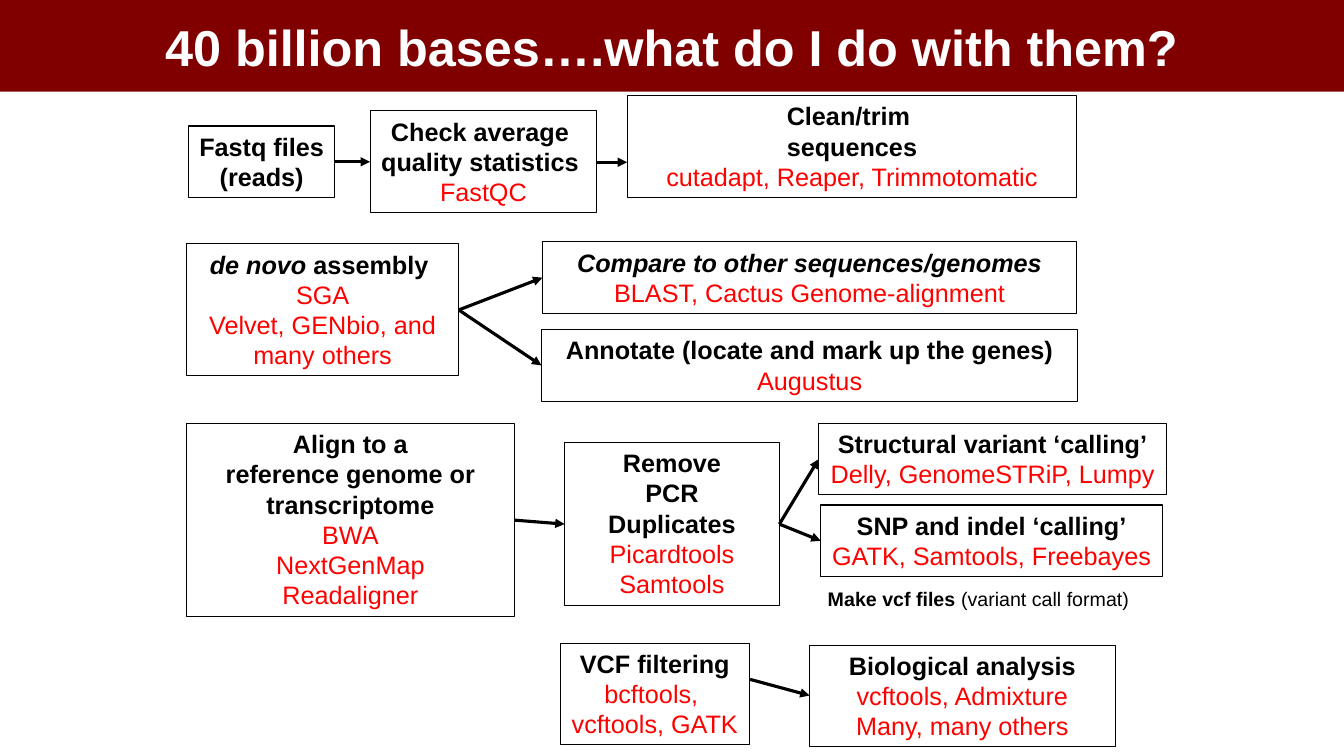
import pptx
import pptx.util
import pptx.dml.color
import pptx.enum.shapes
import pptx.enum.text
import pptx.oxml.ns
import lxml.etree

Inches = pptx.util.Inches
Pt = pptx.util.Pt
RGBColor = pptx.dml.color.RGBColor
MAROON = RGBColor(0x80, 0x00, 0x00)
WHITE = RGBColor(0xFF, 0xFF, 0xFF)
BLACK = RGBColor(0x00, 0x00, 0x00)
RED = RGBColor(0xFF, 0x00, 0x00)
LEFT, RIGHT = 1, 3


def style(font, size, color, bold):
    font.name = "Arial"
    font.size = Pt(size)
    font.color.rgb = color
    font.bold = bold


def add_rect(slide, left, top, width, height):
    rect = slide.shapes.add_shape(
        pptx.enum.shapes.MSO_SHAPE.RECTANGLE,
        Inches(left), Inches(top), Inches(width), Inches(height))
    rect.shadow.inherit = False
    return rect


def add_title(slide, text):
    bar = add_rect(slide, 0, 0, 13.33, 0.91)
    bar.fill.solid()
    bar.fill.fore_color.rgb = MAROON
    bar.line.fill.background()
    para = bar.text_frame.paragraphs[0]
    para.text = text
    para.alignment = pptx.enum.text.PP_ALIGN.CENTER
    style(para.font, 36, WHITE, True)


def add_step(slide, place, heads, tools=(), wrap=True):
    """Draw a box with bold black heads above red tool names.

    A head is a text, or a pair of an italic and an upright part.
    """
    step = add_rect(slide, *place)
    step.fill.background()
    step.line.color.rgb = BLACK
    step.line.width = Pt(0.75)
    frame = step.text_frame
    frame.word_wrap = wrap
    frame.auto_size = pptx.enum.text.MSO_AUTO_SIZE.SHAPE_TO_FIT_TEXT
    frame.vertical_anchor = pptx.enum.text.MSO_ANCHOR.TOP
    rows = [(head, BLACK, True) for head in heads]
    rows += [(tool, RED, False) for tool in tools]
    for index, (text, color, bold) in enumerate(rows):
        para = frame.add_paragraph() if index else frame.paragraphs[0]
        para.alignment = pptx.enum.text.PP_ALIGN.CENTER
        style(para.font, 18, color, bold)
        slanted, upright = ("", text) if isinstance(text, str) else text
        if slanted:
            run = para.add_run()
            run.text = slanted
            run.font.italic = True
        if upright:
            para.add_run().text = upright
    return step


def add_arrow(slide, left, top, right, bottom):
    arrow = slide.shapes.add_connector(
        pptx.enum.shapes.MSO_CONNECTOR.STRAIGHT,
        Inches(left), Inches(top), Inches(right), Inches(bottom))
    arrow.line.color.rgb = BLACK
    arrow.line.width = Pt(2.25)
    qn = pptx.oxml.ns.qn
    lxml.etree.SubElement(arrow.line._get_or_add_ln(), qn("a:tailEnd"), type="triangle")
    lxml.etree.SubElement(arrow._element.spPr, qn("a:effectLst"))
    return arrow


def link(slide, start, *ends):
    """Join the right side of one step to the left side of others."""
    for end in ends:
        arrow = add_arrow(slide, 0, 0, 1, 1)
        arrow.begin_connect(start, RIGHT)
        arrow.end_connect(end, LEFT)


def add_note(slide, place, strong, plain):
    note = slide.shapes.add_textbox(*map(Inches, place))
    note.text_frame.word_wrap = True
    para = note.text_frame.paragraphs[0]
    para.alignment = pptx.enum.text.PP_ALIGN.CENTER
    for text, bold in ((strong, True), (plain, False)):
        run = para.add_run()
        run.text = text
        style(run.font, 14, BLACK, bold)


def add_reads(slide):
    reads = add_step(slide, (1.87, 1.25, 1.45, 0.71),
                     ["Fastq files", "(reads)"], wrap=False)
    check = add_step(slide, (3.67, 1.1, 2.25, 1.01),
                     ["Check average ", "quality statistics "], ["FastQC"], wrap=False)
    add_step(slide, (6.22, 0.95, 4.46, 1.01), ["Clean/trim ", "sequences"],
             ["cutadapt, Reaper, Trimmotomatic"])
    link(slide, reads, check)
    add_arrow(slide, 5.92, 1.61, 6.22, 1.61)


def add_novo(slide):
    novo = add_step(slide, (1.85, 2.42, 2.7, 1.31), [("de novo ", "assembly ")],
                    ["SGA", "Velvet, GENbio, and many others"])
    compare = add_step(slide, (5.38, 2.4, 5.3, 0.71),
                       [("Compare to other sequences/genomes", "")],
                       ["BLAST, Cactus Genome-alignment"])
    genes = add_step(slide, (5.37, 3.27, 5.32, 0.71),
                     ["Annotate (locate and mark up the genes)"], ["Augustus"])
    link(slide, novo, compare, genes)


def add_calling(slide):
    align = add_step(slide, (1.85, 4.2, 3.25, 1.92),
                     ["Align to a", "reference genome or", "transcriptome"],
                     ["BWA", "NextGenMap", "Readaligner"])
    remove = add_step(slide, (5.6, 4.39, 2.13, 1.62),
                      ["Remove", "PCR", "Duplicates"], ["Picardtools", "Samtools"])
    struct = add_step(slide, (8.12, 4.2, 3.45, 0.71), ["Structural variant ‘calling’"],
                      ["Delly, GenomeSTRiP, Lumpy"], wrap=False)
    indel = add_step(slide, (8.14, 5.01, 3.39, 0.71), ["SNP and indel ‘calling’"],
                     ["GATK, Samtools, Freebayes"], wrap=False)
    add_note(slide, (8.03, 5.77, 3.35, 0.34), "Make vcf files", " (variant call format)")
    link(slide, align, remove)
    link(slide, remove, struct, indel)


def add_filter(slide):
    add_step(slide, (5.56, 6.38, 1.87, 1.01), ["VCF filtering"],
             ["bcftools, ", "vcftools, GATK"], wrap=False)
    add_step(slide, (8.03, 6.4, 3.03, 1.01), ["Biological analysis"],
             ["vcftools, Admixture", "Many, many others"])
    add_arrow(slide, 7.44, 6.74, 8.03, 6.9)


def main():
    deck = pptx.Presentation()
    deck.slide_width = Inches(13.33)
    deck.slide_height = Inches(7.5)
    slide = deck.slides.add_slide(deck.slide_layouts[6])
    add_title(slide, "40 billion bases….what do I do with them?")
    add_reads(slide)
    add_novo(slide)
    add_calling(slide)
    add_filter(slide)
    deck.save("out.pptx")


if __name__ == "__main__":
    main()
